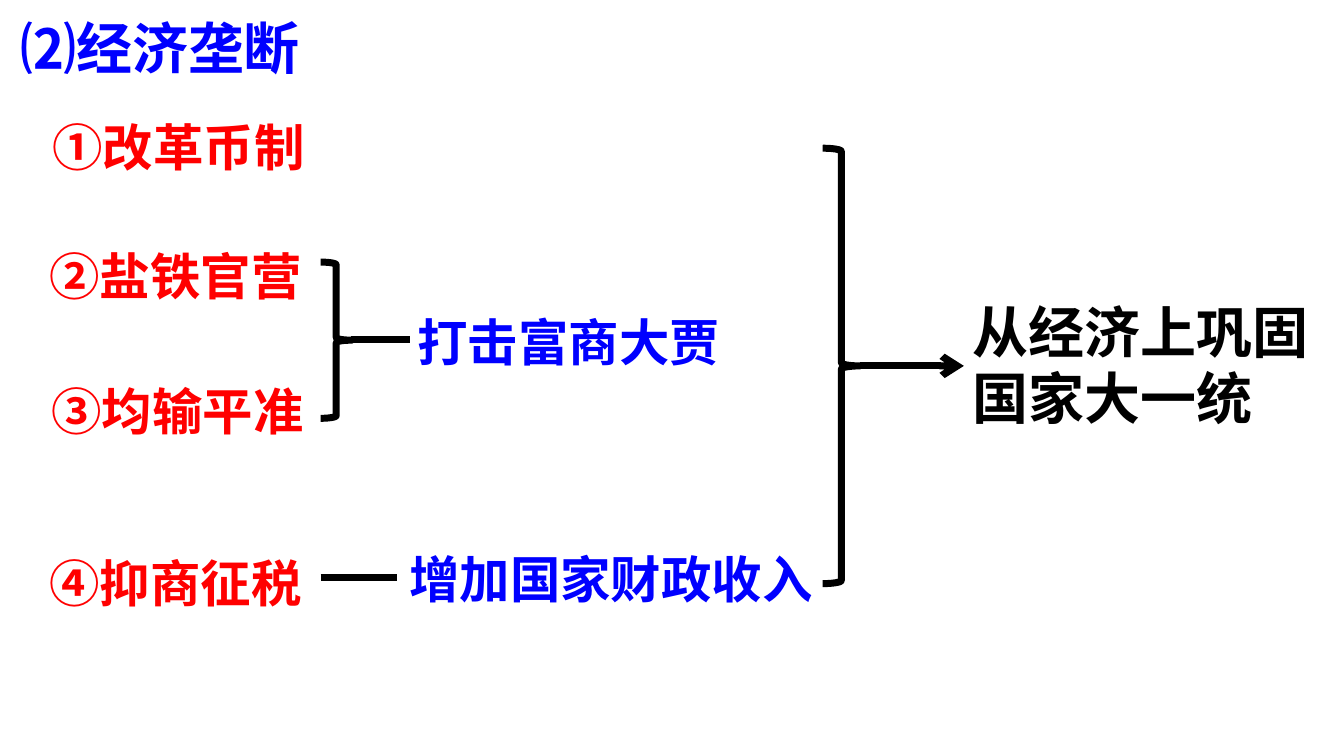
from lxml.etree import SubElement
from pptx import Presentation
from pptx.dml.color import RGBColor
from pptx.enum.shapes import MSO_CONNECTOR, MSO_SHAPE
from pptx.oxml.ns import qn
from pptx.util import Inches, Pt

FONT = "Noto Sans CJK SC"
BLUE = RGBColor(0, 0, 255)
RED = RGBColor(255, 0, 0)
BLACK = RGBColor(0, 0, 0)

deck = Presentation()
deck.slide_width = Inches(13.33)
deck.slide_height = Inches(7.5)
COL = deck.slide_width // 1333
ROW = deck.slide_height // 750
slide = deck.slides.add_slide(deck.slide_layouts[6])


def write(text, left, top, wide, high=73, size=36, color=BLUE):
    box = slide.shapes.add_textbox(left * COL, top * ROW, wide * COL, high * ROW)
    frame = box.text_frame
    frame.word_wrap = True
    frame.margin_left = frame.margin_right = 7 * COL
    frame.margin_top, frame.margin_bottom = 9 * ROW, 4 * ROW
    para = frame.paragraphs[0]
    para.line_spacing = Pt(round(size * 1.18))
    run = para.add_run()
    run.text = text
    run.font.name = FONT
    run.font.size = Pt(size)
    run.font.bold = True
    run.font.color.rgb = color
    SubElement(run._r.get_or_add_rPr(), qn("a:ea")).set("typeface", FONT)


write("⑵经济垄断", 13, 6, 449, size=40)

for text, left, top in [
    ("①改革币制", 45, 108),
    ("②盐铁官营", 42, 236),
    ("③均输平准", 44, 370),
    ("④抑商征税", 42, 540),
]:
    write(text, left, top, 291, color=RED)

write("打击富商大贾", 407, 301, 370)
write("增加国家财政收入", 399, 536, 443)
write("从经济上巩固国家大一统", 958, 288, 375, 152, 40, BLACK)

for left, top, wide, high in [(816, 147, 37, 432), (318, 260, 31, 155)]:
    brace = slide.shapes.add_shape(
        MSO_SHAPE.RIGHT_BRACE, left * COL, top * ROW, wide * COL, high * ROW
    )
    brace.shadow.inherit = False
    brace.fill.background()
    brace.line.color.rgb = BLACK
    brace.line.width = Pt(5)

for start, end, row, arrow in [
    (853, 956, 363, True),
    (318, 394, 573, False),
    (348, 407, 337, False),
]:
    link = slide.shapes.add_connector(
        MSO_CONNECTOR.STRAIGHT, start * COL, row * ROW, end * COL, row * ROW
    )
    link.line.color.rgb = BLACK
    link.line.width = Pt(5)
    if arrow:
        SubElement(link.line._get_or_add_ln(), qn("a:tailEnd")).set("type", "arrow")
    SubElement(link._element.spPr, qn("a:effectLst"))

deck.save("out.pptx")
